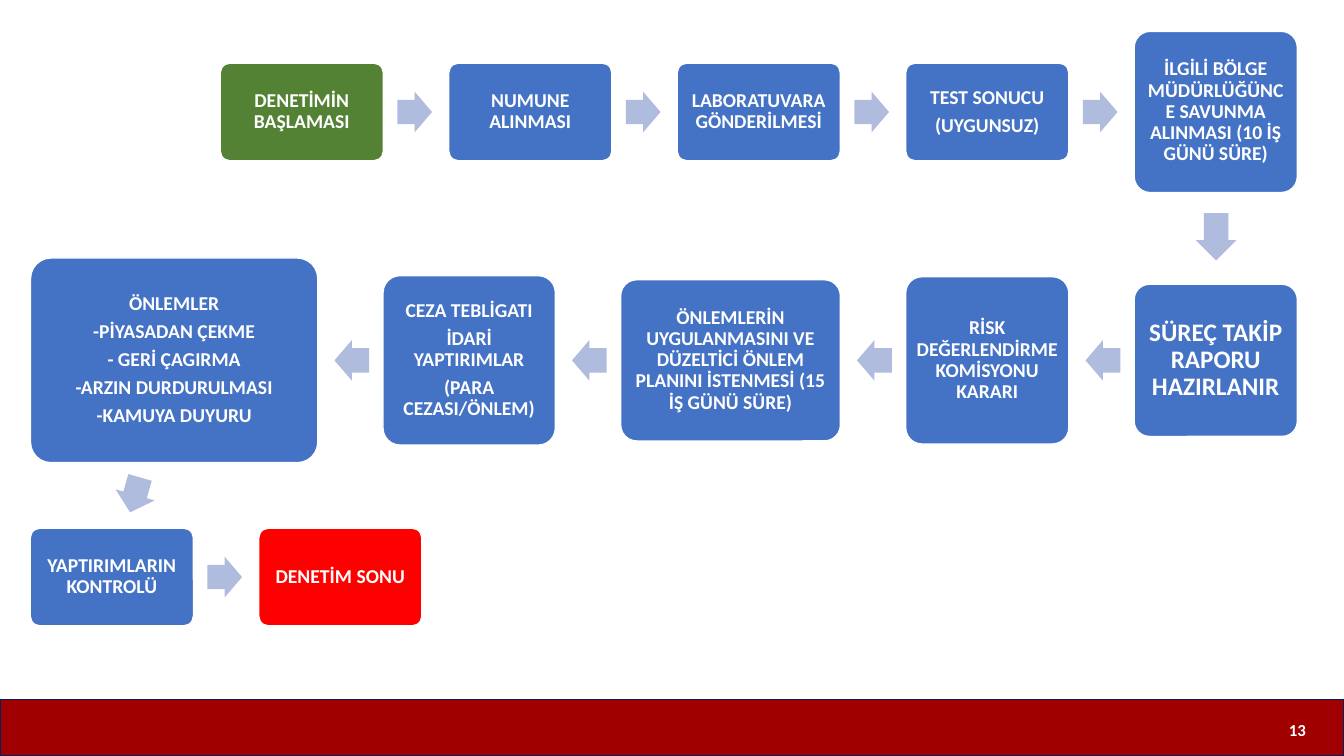
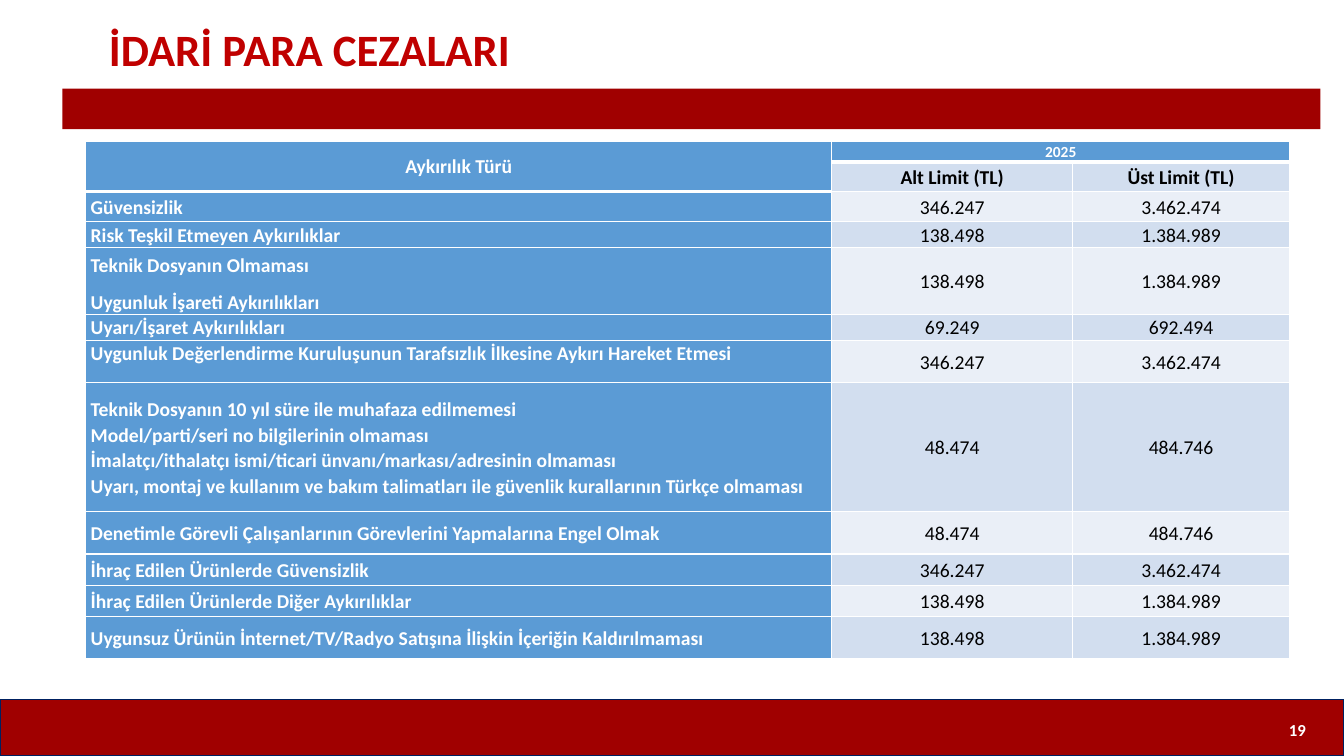
"""Build two slides: the inspection flow and the table of administrative fines."""
import pptx
import pptx.dml.color
import pptx.enum.shapes
import pptx.enum.text
import pptx.oxml
import pptx.oxml.ns
import pptx.util

Pt = pptx.util.Pt
SHAPE = pptx.enum.shapes.MSO_SHAPE
ALIGN = pptx.enum.text.PP_ALIGN
ANCHOR = pptx.enum.text.MSO_ANCHOR

FONT = "Calibri"
WHITE, BLACK, RED, NAVY = "FFFFFF", "000000", "A00000", "002060"
BLUE, GREEN, END, ARROW = "4472C4", "548235", "FF0000", "B0BCDE"
HEAD, LIGHT, PALE = "5B9BD5", "D2DEEF", "EAEFF7"

LEFT, RIGHT, GAP = 21.6, 926.7, 46.6
WIDE, TALL = 116.6, 69.8

ROWS = [
    {"mid": 80, "edge": RIGHT - 5 * WIDE - 4 * GAP, "way": 1, "steps": [
        ("DENETİMİN BAŞLAMASI", WIDE, TALL, GREEN, 14),
        ("NUMUNE ALINMASI", WIDE, TALL, BLUE, 14),
        ("LABORATUVARA GÖNDERİLMESİ", WIDE, TALL, BLUE, 14),
        ("TEST SONUCU\n(UYGUNSUZ)", WIDE, TALL, BLUE, 14),
        ("İLGİLİ BÖLGE MÜDÜRLÜĞÜNCE SAVUNMA ALINMASI (10 İŞ GÜNÜ SÜRE)",
         WIDE, 115.2, BLUE, 14)]},
    {"mid": 257.4, "edge": RIGHT, "way": -1, "steps": [
        ("SÜREÇ TAKİP RAPORU HAZIRLANIR", WIDE, 108.7, BLUE, 18),
        ("RİSK DEĞERLENDİRME KOMİSYONU KARARI", WIDE, 119.5, BLUE, 14),
        ("ÖNLEMLERİN UYGULANMASINI VE DÜZELTİCİ ÖNLEM PLANINI İSTENMESİ "
         "(15 İŞ GÜNÜ SÜRE)", 157, 115.2, BLUE, 14),
        ("CEZA TEBLİGATI\nİDARİ YAPTIRIMLAR\n(PARA CEZASI/ÖNLEM)", 123.1, 121, BLUE, 14),
        ("ÖNLEMLER\n-PİYASADAN ÇEKME\n- GERİ ÇAGIRMA\n-ARZIN DURDURULMASI\n"
         "-KAMUYA DUYURU", 205.2, 146.2, BLUE, 14)]},
    {"mid": 412.2, "edge": LEFT, "way": 1, "steps": [
        ("YAPTIRIMLARIN KONTROLÜ", WIDE, TALL, BLUE, 14),
        ("DENETİM SONU", WIDE, TALL, END, 14)]},
]
TURNS = [(868.7, 169.2, 33.8, 90), (96.5, 353.5, 25.9, 105.9)]

TITLE = "İDARİ PARA CEZALARI"
COLS = [533, 172, 155]
FINES = [
    (15.1, "Aykırılık Türü", "2025", ""),
    (20.9, "", "Alt Limit (TL)", "Üst Limit (TL)"),
    (21.6, "Güvensizlik", "346.247", "3.462.474"),
    (18.7, "Risk Teşkil Etmeyen Aykırılıklar", "138.498", "1.384.989"),
    (47.5, "Teknik Dosyanın Olmaması\nUygunluk İşareti Aykırılıkları",
     "138.498", "1.384.989"),
    (18.7, "Uyarı/İşaret Aykırılıkları", "69.249", "692.494"),
    (30.2, "Uygunluk Değerlendirme Kuruluşunun Tarafsızlık İlkesine Aykırı Hareket Etmesi",
     "346.247", "3.462.474"),
    (92.2, "Teknik Dosyanın 10 yıl süre ile muhafaza edilmemesi\v"
     "Model/parti/seri no bilgilerinin olmaması\v"
     "İmalatçı/ithalatçı ismi/ticari ünvanı/markası/adresinin olmaması\v"
     "Uyarı, montaj ve kullanım ve bakım talimatları ile güvenlik kurallarının Türkçe olmaması",
     "48.474", "484.746"),
    (30.2, "Denetimle Görevli Çalışanlarının Görevlerini Yapmalarına Engel Olmak",
     "48.474", "484.746"),
    (22.3, "İhraç Edilen Ürünlerde Güvensizlik", "346.247", "3.462.474"),
    (22.3, "İhraç Edilen Ürünlerde Diğer Aykırılıklar", "138.498", "1.384.989"),
    (30.2, "Uygunsuz Ürünün İnternet/TV/Radyo Satışına İlişkin İçeriğin Kaldırılmaması",
     "138.498", "1.384.989"),
]
ANCHORS = {(4, 0): ANCHOR.BOTTOM, (6, 0): ANCHOR.TOP}
THICK = {(0, 0), (0, 1), (0, 2), (1, 0)}


def rgb(code):
    return pptx.dml.color.RGBColor.from_string(code)


def style(frame, size, color, bold=True, align=ALIGN.CENTER, line=None, after=None):
    for para in frame.paragraphs:
        para.alignment = align
        para.line_spacing = line
        if after is not None:
            para.space_after = Pt(after)
        for run in para.runs:
            font = run.font
            font.name, font.size, font.bold = FONT, Pt(size), bold
            font.color.rgb = rgb(color)


def inset(item, side, top):
    item.margin_left = item.margin_right = Pt(side)
    item.margin_top = item.margin_bottom = Pt(top)


def draw(slide, kind, left, top, width, height, fill, edge=None):
    shape = slide.shapes.add_shape(kind, Pt(left), Pt(top), Pt(width), Pt(height))
    shape.shadow.inherit = False
    shape.fill.solid()
    shape.fill.fore_color.rgb = rgb(fill)
    if edge:
        shape.line.color.rgb = rgb(edge)
        shape.line.width = Pt(1)
    else:
        shape.line.fill.background()
    return shape


def footer(deck, slide):
    """Place the bottom band on the master, once for all slides."""
    band = draw(slide, SHAPE.RECTANGLE, 0, 499.7, 960, 40.3, RED, NAVY).element
    band.nvSpPr.cNvPr.set("id", "50")
    deck.slide_master.element.cSld.spTree.append(band)


def number(slide, text):
    frame = slide.shapes.add_textbox(Pt(909.4), Pt(499.7), Pt(34.6), Pt(42.5)).text_frame
    frame.word_wrap = True
    frame.vertical_anchor = ANCHOR.MIDDLE
    frame.text = text
    style(frame, 12, WHITE)


def arrow(slide, x, y, width, turn):
    shape = draw(slide, SHAPE.RIGHT_ARROW, x - width / 2, y - 14.5, width, 29, ARROW)
    shape.adjustments[0], shape.adjustments[1] = 0.6, 0.5
    shape.rotation = turn


def step(slide, left, mid, text, width, height, fill, size):
    box = draw(slide, SHAPE.ROUNDED_RECTANGLE, left, mid - height / 2, width, height, fill, WHITE)
    box.adjustments[0] = 0.1
    frame = box.text_frame
    frame.word_wrap = True
    frame.vertical_anchor = ANCHOR.MIDDLE
    inset(frame, 0.3 * size, 0.3 * size)
    frame.text = text
    style(frame, size, WHITE, line=0.9, after=0.35 * size)


def flow(slide):
    for row in ROWS:
        edge, way, mid = row["edge"], row["way"], row["mid"]
        for i, (text, width, *rest) in enumerate(row["steps"]):
            if i:
                arrow(slide, edge + way * (GAP / 2 - 1), mid, 24.8, 0 if way > 0 else 180)
                edge += way * GAP
            step(slide, min(edge, edge + way * width), mid, text, width, *rest)
            edge += way * width
    for turn in TURNS:
        arrow(slide, *turn)


def border(cell, sides):
    props = cell._tc.get_or_add_tcPr()
    for side, width in sides:
        props.append(pptx.oxml.parse_xml(
            f'<a:ln{side} {pptx.oxml.ns.nsdecls("a")} w="{Pt(width)}"><a:solidFill>'
            f'<a:srgbClr val="{WHITE}"/></a:solidFill></a:ln{side}>'))


def table(slide):
    tall = sum(row[0] for row in FINES)
    grid = slide.shapes.add_table(
        len(FINES), len(COLS), Pt(61.2), Pt(100.8), Pt(sum(COLS)), Pt(tall)).table
    grid.first_row = grid.horz_banding = False
    for col, width in zip(grid.columns, COLS):
        col.width = Pt(width)
    for r, (height, *texts) in enumerate(FINES):
        grid.rows[r].height = Pt(height)
        for c, text in enumerate(texts):
            cell = grid.cell(r, c)
            head = r == 0 or c == 0
            border(cell, [("L", 1), ("R", 1), ("T", 3 if (r - 1, c) in THICK else 1),
                          ("B", 3 if (r, c) in THICK else 1)])
            cell.fill.solid()
            cell.fill.fore_color.rgb = rgb(HEAD if head else LIGHT if r % 2 else PALE)
            cell.vertical_anchor = ANCHORS.get((r, c), ANCHOR.MIDDLE)
            inset(cell, 3.6, 0)
            cell.text_frame.text = text
            style(cell.text_frame, 11 if r == 0 and c else 14, WHITE if head else BLACK,
                  head or r == 1, ALIGN.LEFT if c == 0 and r > 1 else ALIGN.CENTER, 1.07, 8)
    grid.cell(0, 0).merge(grid.cell(1, 0))
    grid.cell(0, 1).merge(grid.cell(0, 2))


def heading(slide):
    title = slide.shapes.title
    title.left, title.top, title.width, title.height = Pt(70.6), Pt(12.2), Pt(520), Pt(46)
    frame = title.text_frame
    frame.text = TITLE
    frame.vertical_anchor = ANCHOR.TOP
    style(frame, 32, "C00000", align=ALIGN.LEFT)
    draw(slide, SHAPE.RECTANGLE, 44.6, 63.4, 898.6, 28.8, RED)


def main():
    deck = pptx.Presentation()
    deck.slide_width, deck.slide_height = Pt(960), Pt(540)
    first = deck.slides.add_slide(deck.slide_layouts[6])
    footer(deck, first)
    flow(first)
    number(first, "13")
    second = deck.slides.add_slide(deck.slide_layouts[5])
    heading(second)
    table(second)
    number(second, "19")
    deck.save("out.pptx")


if __name__ == "__main__":
    main()
